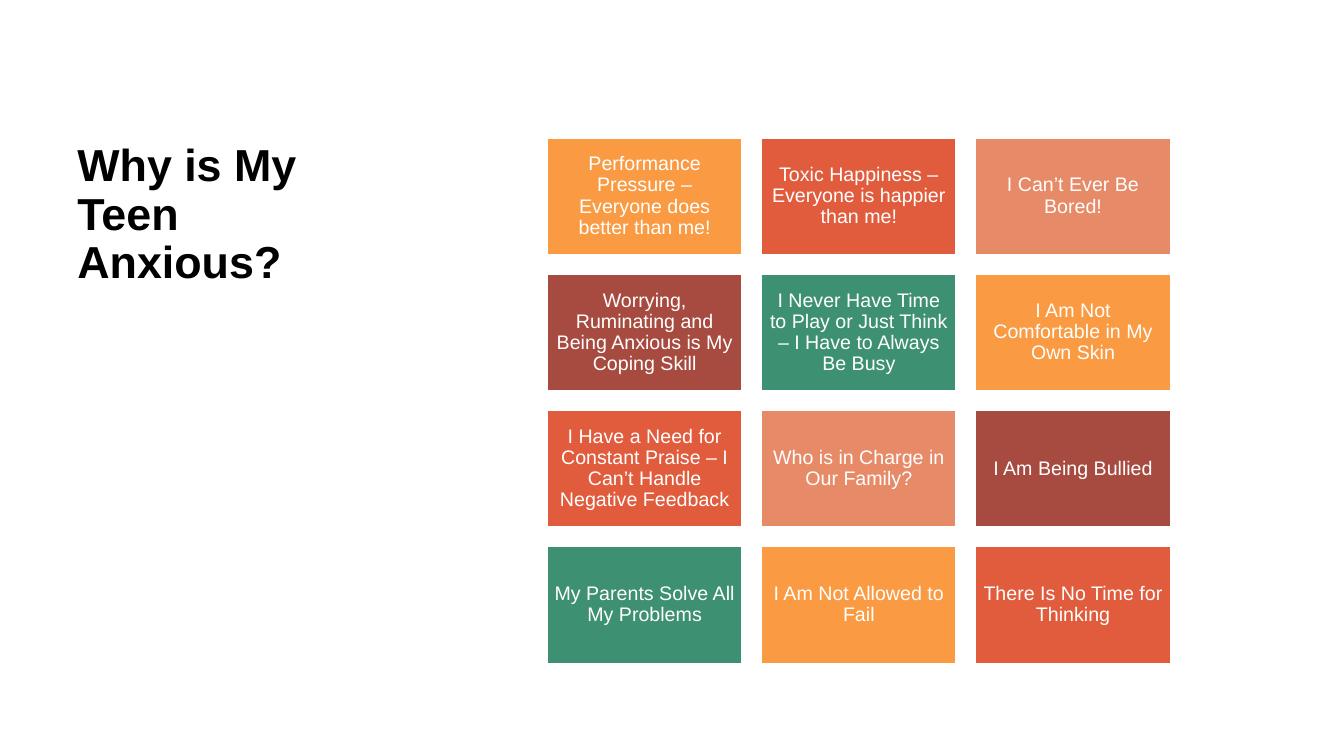
from pptx import Presentation
from pptx.dml.color import RGBColor
from pptx.enum.shapes import MSO_SHAPE
from pptx.enum.text import MSO_ANCHOR, PP_ALIGN
from pptx.util import Pt

RECTANGLE = MSO_SHAPE.RECTANGLE
TOP, MIDDLE = MSO_ANCHOR.TOP, MSO_ANCHOR.MIDDLE
LEFT, CENTER = PP_ALIGN.LEFT, PP_ALIGN.CENTER

BLACK, WHITE = "000000", "FFFFFF"
TILE_COLORS = ["FA9A42", "E15C3D", "E78A67", "A74B40", "3D9072"]
COLUMNS = 3
GRID_LEFT, GRID_TOP = 391, 98.5
TILE_WIDTH, TILE_HEIGHT = 139, 83.4
COLUMN_STEP, ROW_STEP = 153, 97.3

REASONS = [
    "Performance Pressure – Everyone does better than me!",
    "Toxic Happiness – Everyone is happier than me!",
    "I Can’t Ever Be Bored!",
    "Worrying, Ruminating and Being Anxious is My Coping Skill",
    "I Never Have Time to Play or Just Think – I Have to Always Be Busy",
    "I Am Not Comfortable in My Own Skin",
    "I Have a Need for Constant Praise – I Can’t Handle Negative Feedback",
    "Who is in Charge in Our Family?",
    "I Am Being Bullied",
    "My Parents Solve All My Problems",
    "I Am Not Allowed to Fail",
    "There Is No Time for Thinking",
]


def color(value):
    return RGBColor.from_string(value)


def write_text(shape, text, *, size, font_color, bold=False, align=LEFT,
               anchor=TOP, side_inset=7.2, end_inset=3.6):
    frame = shape.text_frame
    frame.word_wrap = True
    frame.vertical_anchor = anchor
    frame.margin_left = frame.margin_right = Pt(side_inset)
    frame.margin_top = frame.margin_bottom = Pt(end_inset)
    paragraph = frame.paragraphs[0]
    paragraph.alignment = align
    paragraph.line_spacing = 0.9
    run = paragraph.add_run()
    run.text = text
    run.font.name = "Arial"
    run.font.size = Pt(size)
    run.font.bold = bold
    run.font.color.rgb = color(font_color)


def add_title(slide, text):
    shape = slide.shapes.add_textbox(Pt(48.2), Pt(98.5), Pt(229), Pt(375.8))
    write_text(shape, text, size=32, font_color=BLACK, bold=True)


def add_tile(slide, text, left, top, fill):
    shape = slide.shapes.add_shape(
        RECTANGLE, Pt(left), Pt(top), Pt(TILE_WIDTH), Pt(TILE_HEIGHT))
    shape.shadow.inherit = False
    shape.fill.solid()
    shape.fill.fore_color.rgb = color(fill)
    shape.line.color.rgb = color(WHITE)
    shape.line.width = Pt(1)
    write_text(shape, text, size=14, font_color=WHITE, align=CENTER,
               anchor=MIDDLE, side_inset=4.2, end_inset=4.2)


def main():
    presentation = Presentation()
    presentation.slide_width = Pt(960)
    presentation.slide_height = Pt(540)
    slide = presentation.slides.add_slide(presentation.slide_layouts[6])
    add_title(slide, "Why is My Teen Anxious?")
    for index, reason in enumerate(REASONS):
        row, column = divmod(index, COLUMNS)
        add_tile(slide, reason,
                 GRID_LEFT + column * COLUMN_STEP,
                 GRID_TOP + row * ROW_STEP,
                 TILE_COLORS[index % len(TILE_COLORS)])
    presentation.save("out.pptx")


if __name__ == "__main__":
    main()
